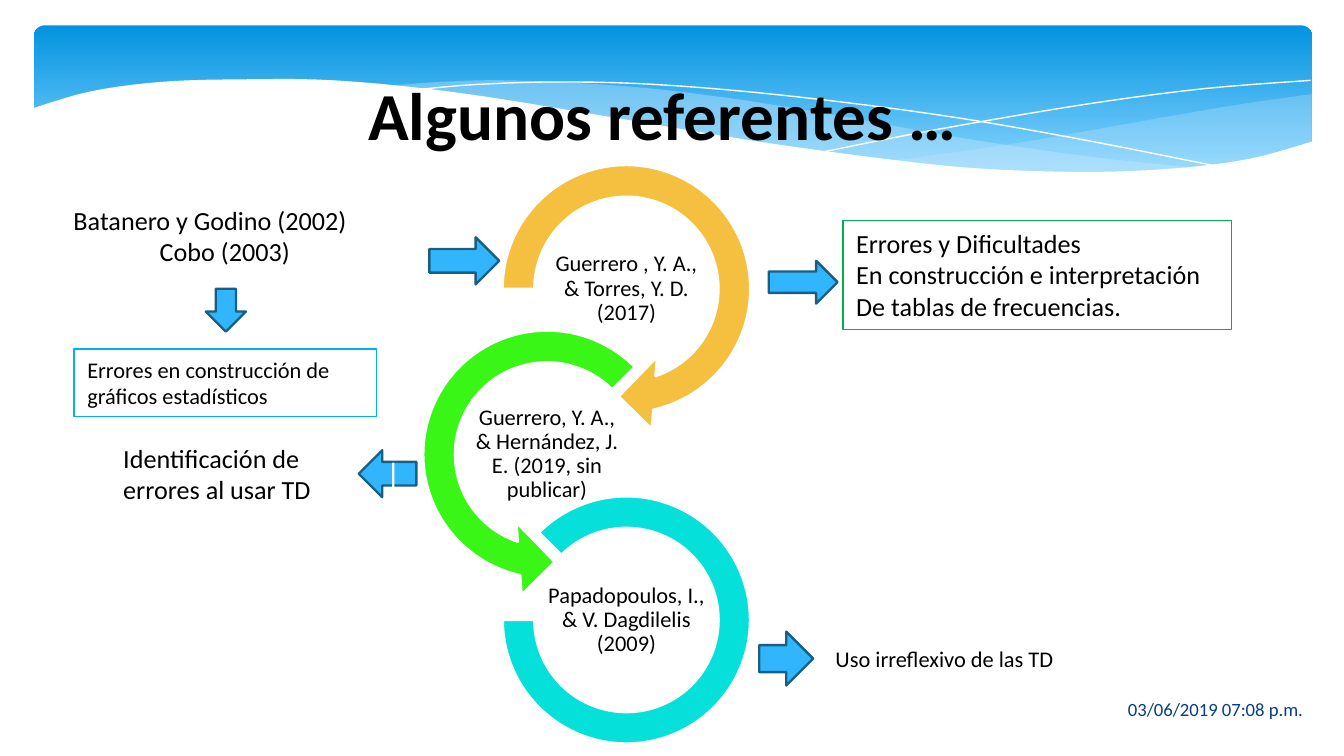
from lxml import etree
from pptx import Presentation
from pptx.dml.color import RGBColor
from pptx.enum import shapes, text
from pptx.oxml.ns import qn
from pptx.util import Cm, Pt

KIND, ALIGN, ANCHOR = shapes.MSO_SHAPE, text.PP_ALIGN, text.MSO_ANCHOR
FONT = "Calibri"
COLORS = {
    "sky": "0293E0", "pale_sky": "83D3FE", "mist": "C6E7FC", "white": "FFFFFF",
    "black": "000000", "navy": "073E87", "amber": "F5C040", "lime": "3AF617",
    "aqua": "05E0DB", "arrow": "31B6FD", "arrow_edge": "195F84",
    "green": "00B050", "cyan": "00B0F0",
}

# Content; all lengths are in centimetres
HEADER = (0.64, 0.48, 24.16, 2.97)
# Each wave: edges (curved through their points), fill, opacity in percent
WAVES = [
    ([[(24.79, 1.78), (23.39, 1.98), (21.87, 2.24), (19.13, 2.72), (16.79, 3.05)],
      [(16.79, 3.05), (18.26, 3.18), (19.84, 3.28), (21.21, 3.28), (22.58, 3.18),
       (23.75, 2.97), (24.79, 2.69)]], "mist", 29),
    ([[(22.68, 3.18), (20.5, 2.95), (17.93, 2.57), (15.98, 2.21), (13.74, 1.85),
       (11.81, 1.63), (9.65, 1.52), (8.33, 1.55), (7.26, 1.63)],
      [(7.26, 1.63), (9.19, 1.85), (11.4, 2.21), (14.38, 2.72), (16.51, 3.02),
       (18.34, 3.2), (20.22, 3.3), (21.77, 3.25), (22.68, 3.18)]], "mist", 40),
    ([[(7.85, 1.7), (8.97, 1.6), (10.57, 1.55), (12.42, 1.6), (14.78, 1.8),
       (17.65, 2.16), (20.19, 2.59), (23.04, 3.15)]], None, 100),
    ([[(15.57, 2.87), (17.65, 2.46), (20.47, 1.98), (22.73, 1.68), (24.77, 1.52)]],
     None, 100),
    ([[(24.82, 2.67), (23.62, 3), (22.23, 3.18), (20.55, 3.25), (18.44, 3.18),
       (16.46, 2.97), (14.1, 2.64), (11.35, 2.18), (8.64, 1.75), (6.35, 1.52),
       (4.5, 1.5), (3.02, 1.55), (1.7, 1.73), (0.58, 2.06)],
      [(0.58, 4.27), (24.82, 4.27)]], "white", 100),
]
# Each ring: kind, centre x, size, adjustments, colour, label
RINGS = [
    (KIND.CIRCULAR_ARROW, 11.84, 5.44, (0.11, 11.42, 45, 108, 0.125), "amber",
     "Guerrero , Y. A., & Torres, Y. D. (2017)"),
    (KIND.LEFT_CIRCULAR_ARROW, 10.34, 5.44, (0.11, 11.42, 63, 189, 0.125), "lime",
     "Guerrero, Y. A., & Hernández, J. E. (2019, sin publicar)"),
    (KIND.BLOCK_ARC, 11.84, 4.67, (135, 108, 0.127), "aqua",
     "Papadopoulos, I., & V. Dagdilelis (2009)"),
]
FIRST_CENTRE, RING_STEP, LABEL_SIZE = 5.46, 3.13, (3.02, 1.5)
# Each note: place, lines, edge colour, text format
NOTES = [
    ((14.35, 13.03, 10.52, 0.76), ["03/06/2019 07:08 p.m."], None,
     dict(size=10, color="navy", align=ALIGN.RIGHT, anchor=ANCHOR.MIDDLE)),
    ((1.09, 0.64, 22.86, 2.39), ["Algunos referentes …"], None,
     dict(size=36, bold=True, align=ALIGN.CENTER, anchor=ANCHOR.BOTTOM)),
    ((15.93, 4.17, 7.34, 2.06),
     ["Errores y Dificultades", "En construcción e interpretación",
      "De tablas de frecuencias."], "green", dict(size=14)),
    ((2.08, 8.23, 4.34, 1.45), ["Identificación de", "errores al usar TD"], None,
     dict(size=14)),
    ((15.54, 12.07, 4.85, 0.76), ["Uso irreflexivo de las TD"], None, dict(size=12)),
    ((1.14, 3.73, 6.22, 1.45), ["Batanero y Godino (2002)", "Cobo (2003)"], None,
     dict(size=14, last_align=ALIGN.CENTER)),
    ((1.4, 6.6, 5.72, 1.27), ["Errores en construcción de", "gráficos estadísticos"],
     "cyan", dict(size=12)),
]
# Each arrow: kind, place, rotation, text
ARROWS = [
    (KIND.RIGHT_ARROW, (14.35, 11.94, 1.02, 1.02), 0, ""),
    (KIND.RIGHT_ARROW, (14.53, 4.93, 1.3, 0.81), 0, ""),
    (KIND.LEFT_ARROW, (6.78, 8.51, 1.09, 0.89), 0, "|"),
    (KIND.DOWN_ARROW, (8.33, 4.27, 0.89, 1.32), 270, ""),
    (KIND.DOWN_ARROW, (3.89, 5.46, 0.76, 0.81), 0, ""),
]


def rgb(name):
    return RGBColor.from_string(COLORS[name])


def paint(shape, fill=None, line=None, width=1.25):
    shape.shadow.inherit = False
    if fill:
        shape.fill.solid()
        shape.fill.fore_color.rgb = rgb(fill)
    else:
        shape.fill.background()
    if line:
        shape.line.color.rgb = rgb(line)
        shape.line.width = Pt(width)
    else:
        shape.line.fill.background()


def put_text(box, lines, size=12, color="black", bold=False, align=ALIGN.LEFT,
             last_align=None, anchor=ANCHOR.TOP, spacing=None, inset=None):
    frame = box.text_frame
    frame.word_wrap = True
    frame.vertical_anchor = anchor
    if inset is not None:
        frame.margin_left = frame.margin_right = Cm(inset)
        frame.margin_top = frame.margin_bottom = Cm(inset)
    for number, line in enumerate(lines):
        para = frame.add_paragraph() if number else frame.paragraphs[0]
        para.alignment = align
        if spacing:
            para.line_spacing = spacing
        span = para.add_run()
        span.text = line
        span.font.name, span.font.size, span.font.bold = FONT, Pt(size), bold
        span.font.color.rgb = rgb(color)
    if last_align is not None:
        para.alignment = last_align


def add_shape(page, kind, place):
    return page.shapes.add_shape(kind, *map(Cm, place))


def add_box(page, place):
    return page.shapes.add_textbox(*map(Cm, place))


def curve(points, steps=5):
    """Catmull-Rom curve through the points; two points stay a straight line."""
    if len(points) < 3:
        return points
    ends = [points[0], *points, points[-1]]
    result = [points[0]]
    for a, b, c, d in zip(ends, ends[1:], ends[2:], ends[3:]):
        for step in range(1, steps + 1):
            t = step / steps
            result.append(tuple(
                (2 * q + (r - p) * t + (2 * p - 5 * q + 4 * r - s) * t ** 2
                 + (3 * q - p - 3 * r + s) * t ** 3) / 2
                for p, q, r, s in zip(a, b, c, d)))
    return result


def add_wave(page, edges, fill, opacity):
    points = [(Cm(x), Cm(y)) for edge in edges for x, y in curve(edge)]
    builder = page.shapes.build_freeform(*points[0], scale=1.0)
    builder.add_line_segments(points[1:], close=bool(fill))
    wave = builder.convert_to_shape()
    paint(wave, fill, None if fill else "white", 0)
    if opacity < 100:
        color = wave.fill._xPr.find(qn("a:solidFill"))[0]
        etree.SubElement(color, qn("a:alpha"), val=str(opacity * 1000))


def add_header(page):
    header = add_shape(page, KIND.ROUNDED_RECTANGLE, HEADER)
    header.adjustments[0] = 0.07
    paint(header)
    header.fill.gradient()
    header.fill.gradient_angle = 270
    for stop, name, position in zip(header.fill.gradient_stops,
                                    ("sky", "pale_sky"), (0, 0.9)):
        stop.color.rgb = rgb(name)
        stop.position = position
    for wave in WAVES:
        add_wave(page, *wave)


def add_rings(page):
    width, height = LABEL_SIZE
    for number, (kind, x, size, adjustments, color, label) in enumerate(RINGS):
        y = FIRST_CENTRE + number * RING_STEP
        ring = add_shape(page, kind, (x - size / 2, y - size / 2, size, size))
        for index, value in enumerate(adjustments):
            ring.adjustments[index] = value
        paint(ring, color, "white")
        box = add_box(page, (x - width / 2, y - height / 2, width, height))
        put_text(box, [label], align=ALIGN.CENTER, anchor=ANCHOR.MIDDLE,
                 spacing=0.9, inset=0.03)


def main():
    deck = Presentation()
    deck.slide_width, deck.slide_height = Cm(25.4), Cm(14.29)
    page = deck.slides.add_slide(deck.slide_layouts[6])
    add_header(page)
    add_rings(page)

    # Title, date and notes
    for place, lines, edge, style in NOTES:
        if edge:
            box = add_shape(page, KIND.RECTANGLE, place)
            paint(box, line=edge, width=0.75)
        else:
            box = add_box(page, place)
        put_text(box, lines, **style)

    # Block arrows
    for kind, place, rotation, label in ARROWS:
        arrow = add_shape(page, kind, place)
        arrow.rotation = rotation
        paint(arrow, "arrow", "arrow_edge")
        if label:
            put_text(arrow, [label], size=18, color="white", align=ALIGN.CENTER,
                     anchor=ANCHOR.MIDDLE)
    deck.save("out.pptx")


if __name__ == "__main__":
    main()
